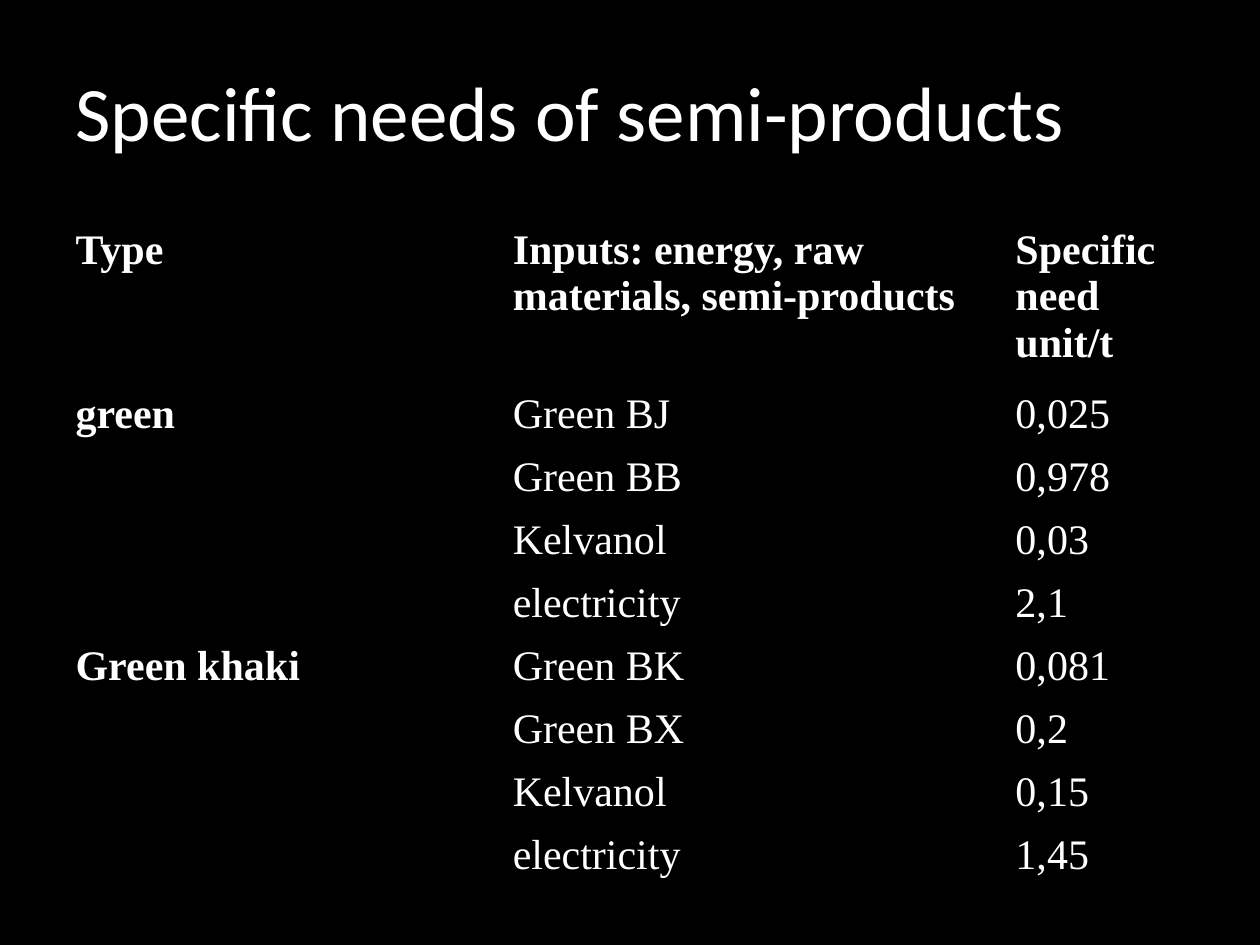
import pptx
import pptx.dml.color
import pptx.enum.text
import pptx.oxml
import pptx.oxml.ns
import pptx.util
from pptx.util import Inches

WHITE = "FFFFFF"
BLACK = "000000"
COLUMN_WIDTHS = (3.47, 3.99, 1.54)
HEADER_HEIGHT = 1.3
ROW_HEIGHT = 0.5
HANGING_INDENT = 0.38
HEADERS = (
    ["Type"],
    ["Inputs: energy, raw materials, semi-products"],
    ["Specific need", "unit/t"],
)
FLUSH_TEXTS = (HEADERS[1][0], HEADERS[2][0])
PRODUCTS = {
    "green": [
        ("Green BJ", "0,025"),
        ("Green BB", "0,978"),
        ("Kelvanol", "0,03"),
        ("electricity", "2,1"),
    ],
    "Green khaki": [
        ("Green BK", "0,081"),
        ("Green BX", "0,2"),
        ("Kelvanol", "0,15"),
        ("electricity", "1,45"),
    ],
}


def color(value):
    """Return the colour for a hex string."""
    return pptx.dml.color.RGBColor.from_string(value)


def add_run(paragraph, text, font_name, size, bold=False):
    """Add one white run to a paragraph."""
    run = paragraph.add_run()
    run.text = text
    run.font.name = font_name
    run.font.size = pptx.util.Pt(size)
    run.font.bold = bold
    run.font.color.rgb = color(WHITE)


def set_title(slide, text):
    """Place and fill the title placeholder."""
    title = slide.shapes.title
    title.left, title.top = Inches(0.5), Inches(0.3)
    title.width, title.height = Inches(9), Inches(1.25)
    title.text_frame.vertical_anchor = pptx.enum.text.MSO_ANCHOR.MIDDLE
    paragraph = title.text_frame.paragraphs[0]
    paragraph.alignment = pptx.enum.text.PP_ALIGN.LEFT
    paragraph.line_spacing = 0.9
    add_run(paragraph, text, "Calibri", 44)


def set_borders(cell):
    """Draw one-point black lines around a cell."""
    properties = cell._tc.get_or_add_tcPr()
    namespace = pptx.oxml.ns.nsdecls("a")
    for position, side in enumerate(("lnL", "lnR", "lnT", "lnB")):
        line = pptx.oxml.parse_xml(
            f'<a:{side} {namespace} w="12700"><a:solidFill>'
            f'<a:srgbClr val="{BLACK}"/></a:solidFill></a:{side}>'
        )
        properties.insert(position, line)


def fill_cell(cell, texts, bold=False):
    """Write one paragraph per text into a cell."""
    frame = cell.text_frame
    for index, text in enumerate(texts):
        paragraph = frame.add_paragraph() if index else frame.paragraphs[0]
        if text not in FLUSH_TEXTS:
            properties = paragraph._p.get_or_add_pPr()
            properties.set("marL", str(Inches(HANGING_INDENT)))
            properties.set("indent", str(-Inches(HANGING_INDENT)))
        add_run(paragraph, text, "Times New Roman", 24, bold)


def add_needs_table(slide):
    """Add the table of inputs and specific needs by product."""
    row_count = 1 + sum(len(inputs) for inputs in PRODUCTS.values())
    height = HEADER_HEIGHT + ROW_HEIGHT * (row_count - 1)
    table = slide.shapes.add_table(
        row_count, len(COLUMN_WIDTHS), Inches(0.5), Inches(1.75),
        Inches(sum(COLUMN_WIDTHS)), Inches(height),
    ).table
    table.first_row = table.horz_banding = False
    for column, width in zip(table.columns, COLUMN_WIDTHS):
        column.width = Inches(width)
    for index, row in enumerate(table.rows):
        row.height = Inches(ROW_HEIGHT if index else HEADER_HEIGHT)
    for cell in table.iter_cells():
        cell.fill.background()
        set_borders(cell)

    for column_index, texts in enumerate(HEADERS):
        fill_cell(table.cell(0, column_index), texts, bold=True)
    first_row = 1
    for product, inputs in PRODUCTS.items():
        product_cell = table.cell(first_row, 0)
        product_cell.merge(table.cell(first_row + len(inputs) - 1, 0))
        fill_cell(product_cell, [product], bold=True)
        for row_index, (name, need) in enumerate(inputs, first_row):
            fill_cell(table.cell(row_index, 1), [name])
            fill_cell(table.cell(row_index, 2), [need])
        first_row += len(inputs)


def main():
    """Build and save the slide."""
    presentation = pptx.Presentation()
    presentation.slide_width = Inches(10)
    presentation.slide_height = Inches(7.5)
    slide = presentation.slides.add_slide(presentation.slide_layouts[5])
    slide.background.fill.solid()
    slide.background.fill.fore_color.rgb = color(BLACK)
    set_title(slide, "Specific needs of semi-products")
    add_needs_table(slide)
    presentation.save("out.pptx")


if __name__ == "__main__":
    main()
